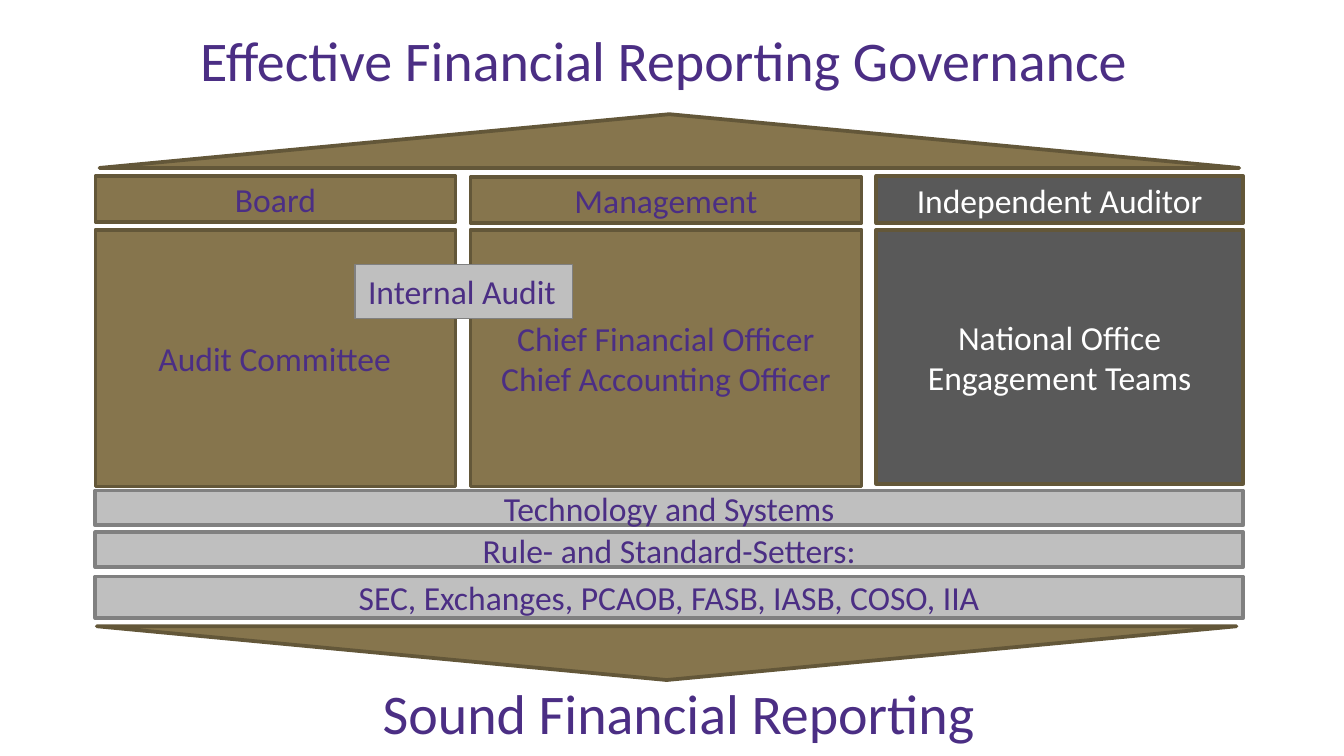
from dataclasses import dataclass

from pptx import Presentation
from pptx.dml.color import RGBColor
from pptx.enum.shapes import MSO_SHAPE as Preset
from pptx.enum.text import MSO_ANCHOR as Anchor, MSO_AUTO_SIZE as AutoSize, PP_ALIGN as Align
from pptx.util import Inches, Pt

COLORS = {
    "purple": "4B2E84",
    "gold": "86754D",
    "brown": "635739",
    "charcoal": "595959",
    "silver": "BFBFBF",
    "gray": "808080",
    "white": "FFFFFF",
}
FONT = "Calibri"
COLUMNS = ((0.71, 2.68), (3.5, 2.91), (6.52, 2.73))
BASE_ROWS = ((3.65, 0.26), (3.96, 0.26), (4.29, 0.31))
FULL_WIDTH = (COLUMNS[0][0], sum(COLUMNS[-1]) - COLUMNS[0][0])


@dataclass(frozen=True)
class Style:
    fill: str
    line: str
    font: str
    line_width: float = 2


@dataclass(frozen=True)
class Pillar:
    header: str
    body: tuple[str, ...]
    style: Style
    indent: float = 0
    header_row: tuple[float, float] = (1.31, 0.34)
    body_row: tuple[float, float] = (1.71, 1.91)


GOLD = Style("gold", "brown", "purple")
CHARCOAL = Style("charcoal", "brown", "white")
SILVER = Style("silver", "gray", "purple")
SILVER_THIN = Style("silver", "gray", "purple", 0.75)

PILLARS = (
    Pillar("Board", ("Audit Committee",), GOLD, indent=0.37),
    Pillar("Management", ("Chief Financial Officer", "Chief Accounting Officer"), GOLD,
           header_row=(1.32, 0.34)),
    Pillar("Independent Auditor", ("National Office", "Engagement Teams"), CHARCOAL,
           header_row=(1.31, 0.35), body_row=(1.71, 1.89)),
)
FOUNDATIONS = (
    "Technology and Systems",
    "Rule- and Standard-Setters:",
    "SEC, Exchanges, PCAOB, FASB, IASB, COSO, IIA",
)


def color(name: str) -> RGBColor:
    return RGBColor.from_string(COLORS[name])


def write_text(shape, *lines: str, size: float = 18, font_color: str = "purple",
               align=Align.CENTER, anchor=Anchor.MIDDLE, spacing: float | None = None,
               indent: float = 0) -> None:
    frame = shape.text_frame
    frame.word_wrap = True
    frame.vertical_anchor = anchor
    for index, line in enumerate(lines):
        paragraph = frame.add_paragraph() if index else frame.paragraphs[0]
        paragraph.text = line
        paragraph.alignment = align
        if spacing:
            paragraph.line_spacing = spacing
        if indent:
            paragraph.level = 1
            properties = paragraph._p.get_or_add_pPr()
            properties.set("marL", str(Inches(indent)))
            properties.set("indent", "0")
        font = paragraph.font
        font.name, font.size = FONT, Pt(size)
        font.color.rgb = color(font_color)


def add_block(slide, column: tuple[float, float], row: tuple[float, float],
              style: Style, preset=Preset.RECTANGLE):
    (left, width), (top, height) = column, row
    shape = slide.shapes.add_shape(preset, *map(Inches, (left, top, width, height)))
    shape.shadow.inherit = False
    shape.fill.solid()
    shape.fill.fore_color.rgb = color(style.fill)
    shape.line.color.rgb = color(style.line)
    shape.line.width = Pt(style.line_width)
    return shape


def add_pillar(slide, column: tuple[float, float], pillar: Pillar) -> None:
    body = add_block(slide, column, pillar.body_row, pillar.style)
    write_text(body, *pillar.body, font_color=pillar.style.font, indent=pillar.indent,
               align=Align.LEFT if pillar.indent else Align.CENTER)
    header = add_block(slide, column, pillar.header_row, pillar.style)
    write_text(header, pillar.header, font_color=pillar.style.font)


def main() -> None:
    presentation = Presentation()
    presentation.slide_width = Inches(10)
    presentation.slide_height = presentation.slide_width * 9 // 16
    slide = presentation.slides.add_slide(presentation.slide_layouts[5])

    title = slide.shapes.title
    title.left, title.top, title.width, title.height = map(Inches, (0.63, 0.2, 8.62, 0.58))
    write_text(title, "Effective Financial Reporting Governance", size=30,
               anchor=Anchor.TOP, spacing=0.9)

    for column, pillar in zip(COLUMNS, PILLARS):
        add_pillar(slide, column, pillar)
    for row, label in zip(BASE_ROWS, FOUNDATIONS):
        write_text(add_block(slide, FULL_WIDTH, row, SILVER), label)

    internal_audit = add_block(slide, (2.64, 1.62), (1.97, 0.4), SILVER_THIN)
    write_text(internal_audit, "Internal Audit", align=Align.LEFT, anchor=Anchor.TOP)
    internal_audit.text_frame.auto_size = AutoSize.SHAPE_TO_FIT_TEXT

    add_block(slide, (0.74, 8.48), (0.85, 0.4), GOLD, Preset.ISOSCELES_TRIANGLE)
    base = add_block(slide, (0.72, 8.48), (4.66, 0.4), GOLD, Preset.ISOSCELES_TRIANGLE)
    base.rotation = 180

    outcome = slide.shapes.add_textbox(*map(Inches, (0.74, 5.06, 8.62, 0.39)))
    write_text(outcome, "Sound Financial Reporting", size=30, anchor=Anchor.TOP, spacing=0.9)

    presentation.save("out.pptx")


if __name__ == "__main__":
    main()
